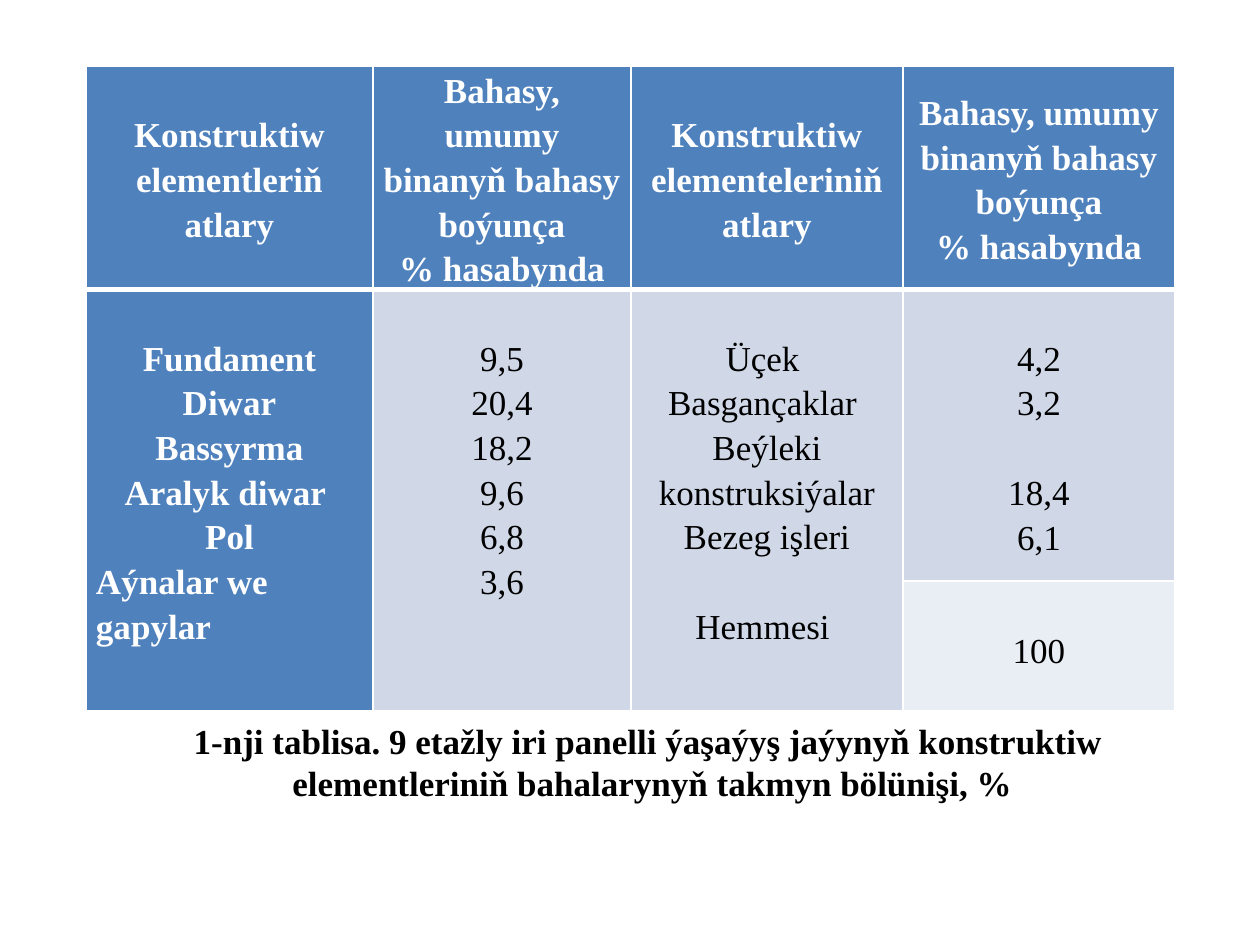
import pptx
import pptx.dml.color
import pptx.enum.text
import pptx.util
from lxml import etree
from pptx.oxml.ns import qn

RGB = pptx.dml.color.RGBColor
ALIGN = pptx.enum.text.PP_ALIGN
ANCHOR = pptx.enum.text.MSO_ANCHOR
WHITE = RGB(0xFF, 0xFF, 0xFF)
BLACK = RGB(0x00, 0x00, 0x00)
BLUE = RGB(0x4F, 0x81, 0xBD)
PALE = RGB(0xD0, 0xD8, 0xE8)
PALER = RGB(0xE9, 0xED, 0xF4)
FONT, SIZE = "Times New Roman", 20
LINE = 45  # px, one line of table text

# Content
COST = ["Bahasy, umumy binanyň bahasy boýunça", "% hasabynda"]
HEADERS = [
    ["Konstruktiw elementleriň", "atlary"],
    COST,
    ["Konstruktiw elementeleriniň atlary"],
    COST,
]
ELEMENTS = ["Fundament", "Diwar", "Bassyrma", "Aralyk diwar ", "Pol",
            "Aýnalar we gapylar"]
ELEMENT_COSTS = ["9,5", "20,4", "18,2", "9,6", "6,8", "3,6"]
OTHER_ELEMENTS = ["Üçek ", "Basgançaklar ", "Beýleki konstruksiýalar",
                  "Bezeg işleri", "Hemmesi "]
OTHER_COSTS = ["4,2", "3,2", "18,4", "6,1"]
TOTAL = ["100"]
CAPTION = [
    "1-nji tablisa. 9 etažly iri panelli ýaşaýyş jaýynyň konstruktiw ",
    "elementleriniň bahalarynyň takmyn bölünişi, %",
]

COLUMNS = [287, 258, 272, 272]
ROWS = [223, 292, 130]


def px(count):
    return pptx.util.Emu(round(count * 914400 / 126))


def write(frame, lines, color, bold):
    frame.text = "\n".join(lines)
    for para in frame.paragraphs:
        para.alignment = ALIGN.CENTER
        for span in para.runs:
            span.font.name = FONT
            span.font.size = pptx.util.Pt(SIZE)
            span.font.bold = bold
            span.font.color.rgb = color


def set_borders(cell, widths):
    properties = cell._tc.get_or_add_tcPr()
    for side, width in widths.items():
        line = etree.SubElement(properties, qn("a:ln" + side),
                                w=str(pptx.util.Pt(width)))
        fill = etree.SubElement(line, qn("a:solidFill"))
        etree.SubElement(fill, qn("a:srgbClr"), val=str(WHITE))


def fill_cell(cell, lines, fill, color, bold, top=LINE, gap_before=None):
    cell.fill.solid()
    cell.fill.fore_color.rgb = fill
    cell.margin_left = cell.margin_right = px(10)
    cell.margin_top, cell.margin_bottom = px(top), 0
    write(cell.text_frame, lines, color, bold)
    for para in cell.text_frame.paragraphs:
        para.line_spacing = 1.15
    if gap_before is not None:
        cell.text_frame.paragraphs[gap_before].space_before = px(LINE)


deck = pptx.Presentation()
deck.slide_width, deck.slide_height = px(1260), px(945)
page = deck.slides.add_slide(deck.slide_layouts[6])

# Table grid
table = page.shapes.add_table(len(ROWS), len(COLUMNS), px(86), px(66),
                              px(sum(COLUMNS)), px(sum(ROWS))).table
table.first_col = True
for column, width in zip(table.columns, COLUMNS):
    column.width = px(width)
for row, height in zip(table.rows, ROWS):
    row.height = px(height)
for number in range(len(ROWS)):
    for cell in table.rows[number].cells:
        set_borders(cell, {"L": 1, "R": 1, "T": 3 if number == 1 else 1,
                           "B": 3 if number == 0 else 1})
for number in range(3):
    table.cell(1, number).merge(table.cell(2, number))

# Header row
for number, lines in enumerate(HEADERS):
    cell = table.cell(0, number)
    fill_cell(cell, lines, BLUE, WHITE, True, top=0)
    cell.vertical_anchor = ANCHOR.MIDDLE

# Body
fill_cell(table.cell(1, 0), ELEMENTS, BLUE, WHITE, True)
table.cell(1, 0).text_frame.paragraphs[-1].alignment = ALIGN.LEFT
fill_cell(table.cell(1, 1), ELEMENT_COSTS, PALE, BLACK, False)
fill_cell(table.cell(1, 2), OTHER_ELEMENTS, PALE, BLACK, False, gap_before=4)
fill_cell(table.cell(1, 3), OTHER_COSTS, PALE, BLACK, False, gap_before=2)
fill_cell(table.cell(2, 3), TOTAL, PALER, BLACK, False)

# Caption
box = page.shapes.add_textbox(px(178), px(713), px(949), px(97))
frame = box.text_frame
write(frame, CAPTION, BLACK, True)
frame.word_wrap = False
frame.auto_size = pptx.enum.text.MSO_AUTO_SIZE.SHAPE_TO_FIT_TEXT
frame.vertical_anchor = ANCHOR.MIDDLE

deck.save("out.pptx")
